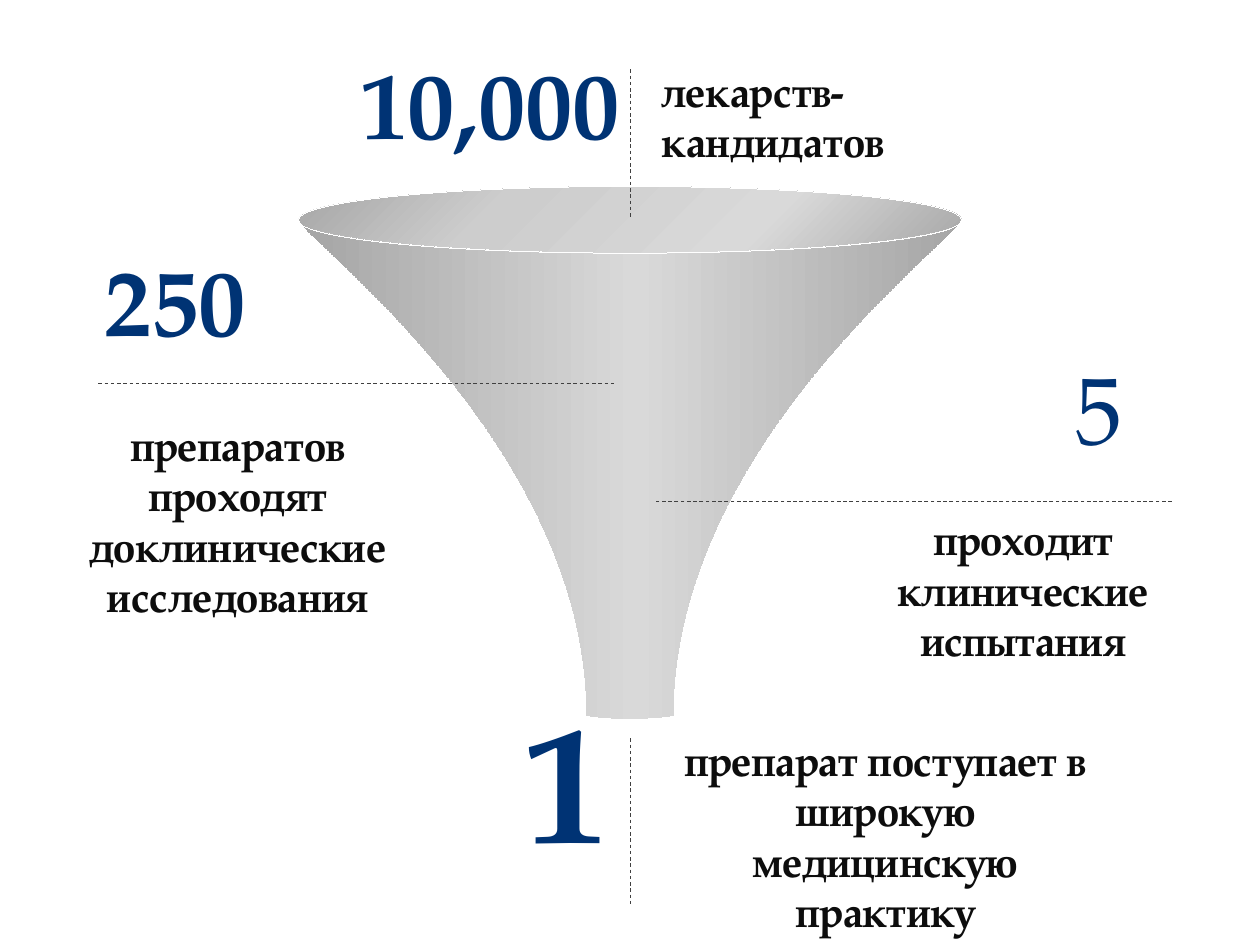
from lxml import etree
from pptx import Presentation
from pptx.dml.color import RGBColor
from pptx.enum.dml import MSO_LINE
from pptx.enum.shapes import MSO_CONNECTOR, MSO_SHAPE
from pptx.enum.text import MSO_AUTO_SIZE, PP_ALIGN
from pptx.oxml import parse_xml
from pptx.oxml.ns import nsdecls, qn
from pptx.util import Pt

PX = 9144  # EMU per px, 100 px to the inch
FONT = "TeX Gyre Pagella"
NAVY = RGBColor(0x00, 0x33, 0x74)
INK = RGBColor(0x0D, 0x0D, 0x0D)
RULE = RGBColor(0x40, 0x40, 0x40)
WHITE = RGBColor(0xFF, 0xFF, 0xFF)
LIGHT = RGBColor(0xD9, 0xD9, 0xD9)
SILVER = RGBColor(0xCD, 0xCD, 0xCD)
GREY = RGBColor(0xA6, 0xA6, 0xA6)
LEFT, CENTER, RIGHT = PP_ALIGN.LEFT, PP_ALIGN.CENTER, PP_ALIGN.RIGHT
STRAIGHT, OVAL = MSO_CONNECTOR.STRAIGHT, MSO_SHAPE.OVAL
DASH, GROW = MSO_LINE.DASH, MSO_AUTO_SIZE.SHAPE_TO_FIT_TEXT

LABEL = {"size": Pt(24), "bold": True, "name": FONT}
NUMBER = {"size": Pt(54), "bold": True, "name": FONT}
PLAIN_NUMBER = {**NUMBER, "bold": False}
BIG_NUMBER = {**NUMBER, "size": Pt(96)}

LINEAR = '<a:lin ang="10800000" scaled="0"/>'
RADIAL = '<a:path path="circle"><a:fillToRect l="100000" t="100000"/></a:path>'

# Right half of the funnel body, as Bezier curves from its axis and top
BODY_HALF = [
    [(0, 24), (137, 24), (249, 14), (262, 0)],
    [(262, 0), (244, 25), (35, 183), (35, 391)],
    [(35, 391), (35, 392), (20, 394), (0, 394)],
]
HALF_WIDTH = 262

# Each stage: origin, number, label and rule; boxes are relative to the origin
STAGES = [
    {"at": (258, 31),
     "number": ("10,000", (0, 0, 244, 101), RIGHT, NUMBER),
     "label": (["лекарств-", "кандидатов"], (257, 16, 214, 91), LEFT, False),
     "rule": (242, 24, 242, 141)},
    {"at": (47, 187),
     "number": ("250", (23, 0, 135, 101), RIGHT, NUMBER),
     "label": (["препаратов проходят доклинические исследования"],
               (0, 141, 283, 172), CENTER, True),
     "rule": (31, 117, 441, 117)},
    {"at": (519, 273),
     "number": ("5", (325, 0, 56, 101), RIGHT, PLAIN_NUMBER),
     "label": (["проходит клинические испытания"],
               (167, 130, 252, 131), CENTER, True),
     "rule": (411, 125, 0, 125)},
    {"at": (406, 531),
     "number": ("1", (0, 0, 69, 172), LEFT, BIG_NUMBER),
     "label": (["препарат поступает в широкую медицинскую практику"],
               (117, 47, 359, 172), CENTER, True),
     "rule": (94, 55, 94, 188)},
]


def add_text(page, lines, box, align, style, color, wrap):
    text_box = page.shapes.add_textbox(*(v * PX for v in box))
    frame = text_box.text_frame
    frame.word_wrap = wrap
    frame.auto_size = GROW
    for i, line in enumerate(lines):
        para = frame.paragraphs[0] if i == 0 else frame.add_paragraph()
        para.alignment = align
        span = para.add_run()
        span.text = line
        for key, value in style.items():
            setattr(span.font, key, value)
        span.font.color.rgb = color


def add_rule(page, ends):
    rule = page.shapes.add_connector(STRAIGHT, *(v * PX for v in ends))
    rule.line.color.rgb = RULE
    rule.line.width = Pt(0.5)
    rule.line.dash_style = DASH
    rule._element.spPr.append(parse_xml(f"<a:effectLst {nsdecls('a')}/>"))


def shade(shape, stops, direction):
    shape.shadow.inherit = False
    shape.line.color.rgb = WHITE
    shape.fill.gradient()
    marks = "".join(
        f'<a:gs pos="{pos * 1000}"><a:srgbClr val="{color}"/></a:gs>'
        for pos, color in stops)
    properties = shape._element.spPr
    properties.find(qn("a:ln")).set("w", "0")  # hairline
    properties.replace(
        properties.find(qn("a:gradFill")),
        parse_xml(f'<a:gradFill {nsdecls("a")} rotWithShape="1">'
                  f"<a:gsLst>{marks}</a:gsLst>{direction}</a:gradFill>"))


def add_curved_shape(page, curves, left, top):
    """Build an outline through the curve ends, then bend each side."""
    start = curves[0][0]
    builder = page.shapes.build_freeform(*start, scale=PX)
    builder.add_line_segments([curve[-1] for curve in curves], close=True)
    shape = builder.convert_to_shape(left * PX, top * PX)
    sides = list(shape._element.spPr.iter(qn("a:lnTo")))
    for side, curve in zip(sides, curves):
        bend = etree.Element(qn("a:cubicBezTo"))
        for x, y in curve[1:]:
            etree.SubElement(bend, qn("a:pt"), x=str(x), y=str(y))
        side.getparent().replace(side, bend)
    return shape


def add_funnel(page, box):
    left, top, width, rim_height = box
    # Rim
    rim = page.shapes.add_shape(OVAL, *(v * PX for v in box))
    shade(rim, [(0, GREY), (31, LIGHT), (70, SILVER), (100, GREY)], RADIAL)
    # Body, mirrored about the axis
    mirrored = [[(-x, y) for x, y in reversed(curve)]
                for curve in reversed(BODY_HALF)]
    curves = [[(x + HALF_WIDTH, y) for x, y in curve]
              for curve in BODY_HALF + mirrored]
    body = add_curved_shape(page, curves, left + width // 2 - HALF_WIDTH,
                            top + rim_height - 24)
    shade(body, [(0, GREY), (49, LIGHT), (99, GREY)], LINEAR)


def add_stage(page, at, number, label, rule):
    x, y = at
    add_rule(page, (x + rule[0], y + rule[1], x + rule[2], y + rule[3]))

    def place(box):
        return x + box[0], y + box[1], box[2], box[3]

    lines, box, align, wrap = label
    add_text(page, lines, place(box), align, LABEL, INK, wrap)
    value, box, align, style = number
    add_text(page, [value], place(box), align, style, NAVY, False)


def main():
    deck = Presentation()
    deck.slide_width, deck.slide_height = 1000 * PX, 750 * PX
    page = deck.slides.add_slide(deck.slide_layouts[6])
    add_funnel(page, (237, 148, 526, 53))
    for stage in STAGES:
        add_stage(page, **stage)
    deck.save("out.pptx")


if __name__ == "__main__":
    main()
